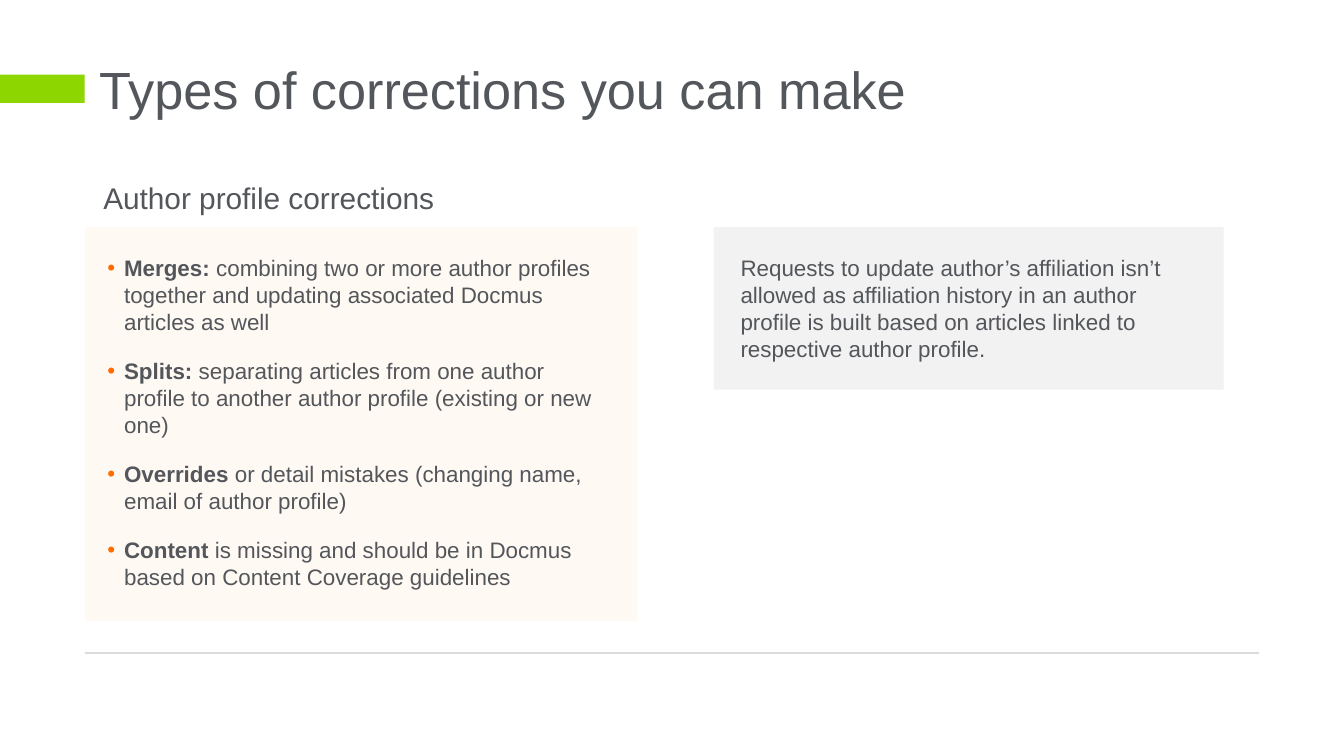
import pptx
import pptx.util
from lxml import etree
from pptx.dml.color import RGBColor
from pptx.enum.shapes import MSO_CONNECTOR, MSO_SHAPE
from pptx.enum.text import MSO_ANCHOR, PP_ALIGN
from pptx.oxml.ns import qn

PX = 4572  # 200 px to the inch
FONT = "Arial"
GREY_TEXT = RGBColor(0x53, 0x56, 0x5A)
GREEN = RGBColor(0x8E, 0xD6, 0x00)
ORANGE = RGBColor(0xFF, 0x6C, 0x00)
PEACH = RGBColor(0xFF, 0xE2, 0xCC)
LIGHT_GREY = RGBColor(0xF2, 0xF2, 0xF2)
RULE_GREY = RGBColor(0xDC, 0xDC, 0xDC)

TITLE = "Types of corrections you can make"
SUBTITLE = "Author profile corrections"
CORRECTIONS = [
    ("Merges:", " combining two or more author profiles together and updating associated Docmus articles as well"),
    ("Splits:", " separating articles from one author profile to another author profile (existing or new one)"),
    ("Overrides", " or detail mistakes (changing name, email of author profile)"),
    ("Content", " is missing and should be in Docmus based on Content Coverage guidelines"),
]
NOTE = ("Requests to update author’s affiliation isn’t allowed as affiliation history in an author "
        "profile is built based on articles linked to respective author profile.")

LEFT, RIGHT = 126, 1874
PANEL_TOP, PANEL_WIDTH = 338, 822


def px(*values):
    return [pptx.util.Emu(v * PX) for v in values]


def set_frame(sp, insets, anchor=MSO_ANCHOR.TOP):
    """Wrap the text; insets run left, top, right, bottom."""
    tf = sp.text_frame
    tf.word_wrap = True
    tf.vertical_anchor = anchor
    tf.margin_left, tf.margin_top, tf.margin_right, tf.margin_bottom = px(*insets)
    return tf


def add_run(p, text, size, bold=False):
    r = p.add_run()
    r.text = text
    r.font.name = FONT
    r.font.size = pptx.util.Pt(size)
    r.font.bold = bold
    r.font.color.rgb = GREY_TEXT


def add_rect(slide, box, color):
    sp = slide.shapes.add_shape(MSO_SHAPE.RECTANGLE, *px(*box))
    sp.shadow.inherit = False
    sp.fill.solid()
    sp.fill.fore_color.rgb = color
    sp.line.fill.background()
    return sp


def add_label(slide, box, text, size, insets, anchor=MSO_ANCHOR.TOP):
    tf = set_frame(slide.shapes.add_textbox(*px(*box)), insets, anchor)
    add_run(tf.paragraphs[0], text, size)
    return tf.paragraphs[0]


def add_bullet(p):
    pPr = p._p.get_or_add_pPr()
    pPr.set("marL", str(39 * PX))
    pPr.set("indent", str(-25 * PX))
    color = etree.SubElement(pPr, qn("a:buClr"))
    etree.SubElement(color, qn("a:srgbClr"), val=str(ORANGE))
    etree.SubElement(pPr, qn("a:buFont"), typeface=FONT)
    etree.SubElement(pPr, qn("a:buChar"), char="•")


def add_rule(slide, y):
    line = slide.shapes.add_connector(MSO_CONNECTOR.STRAIGHT, *px(LEFT, y, RIGHT, y))
    line.line.color.rgb = RULE_GREY
    line.line.width = pptx.util.Pt(1)
    etree.SubElement(line._element.spPr, qn("a:effectLst"))


def add_note(slide):
    sp = add_rect(slide, (1062, PANEL_TOP, 759, 242), LIGHT_GREY)
    p = set_frame(sp, (40, 40, 40, 40)).paragraphs[0]
    p.alignment = PP_ALIGN.LEFT
    add_run(p, NOTE, 12)


def add_corrections(slide):
    sp = add_rect(slide, (LEFT, PANEL_TOP, PANEL_WIDTH, 586), PEACH)
    color = sp._element.spPr.find(qn("a:solidFill"))[0]
    etree.SubElement(color, qn("a:alpha"), val="20000")
    tf = set_frame(sp, (20, 40, 40, 40))
    for i, (term, meaning) in enumerate(CORRECTIONS):
        p = tf.add_paragraph() if i else tf.paragraphs[0]
        p.alignment = PP_ALIGN.LEFT
        if i:
            p.space_before = pptx.util.Pt(12)
        add_bullet(p)
        add_run(p, term, 12, bold=True)
        add_run(p, meaning, 12)


def main():
    prs = pptx.Presentation()
    prs.slide_width, prs.slide_height = px(2000, 1125)
    slide = prs.slides.add_slide(prs.slide_layouts[6])
    add_rule(slide, 972)
    add_label(slide, (128, 81, 1748, 102), TITLE, 28, (20, 0, 20, 0), MSO_ANCHOR.MIDDLE)
    add_rect(slide, (-2, 111, 128, 42), GREEN)
    p = add_label(slide, (115, 258, PANEL_WIDTH, 80), SUBTITLE, 16, (20, 10, 20, 10))
    p._p.get_or_add_pPr().set("marL", str(19 * PX))
    add_note(slide)
    add_corrections(slide)
    prs.save("out.pptx")


if __name__ == "__main__":
    main()
